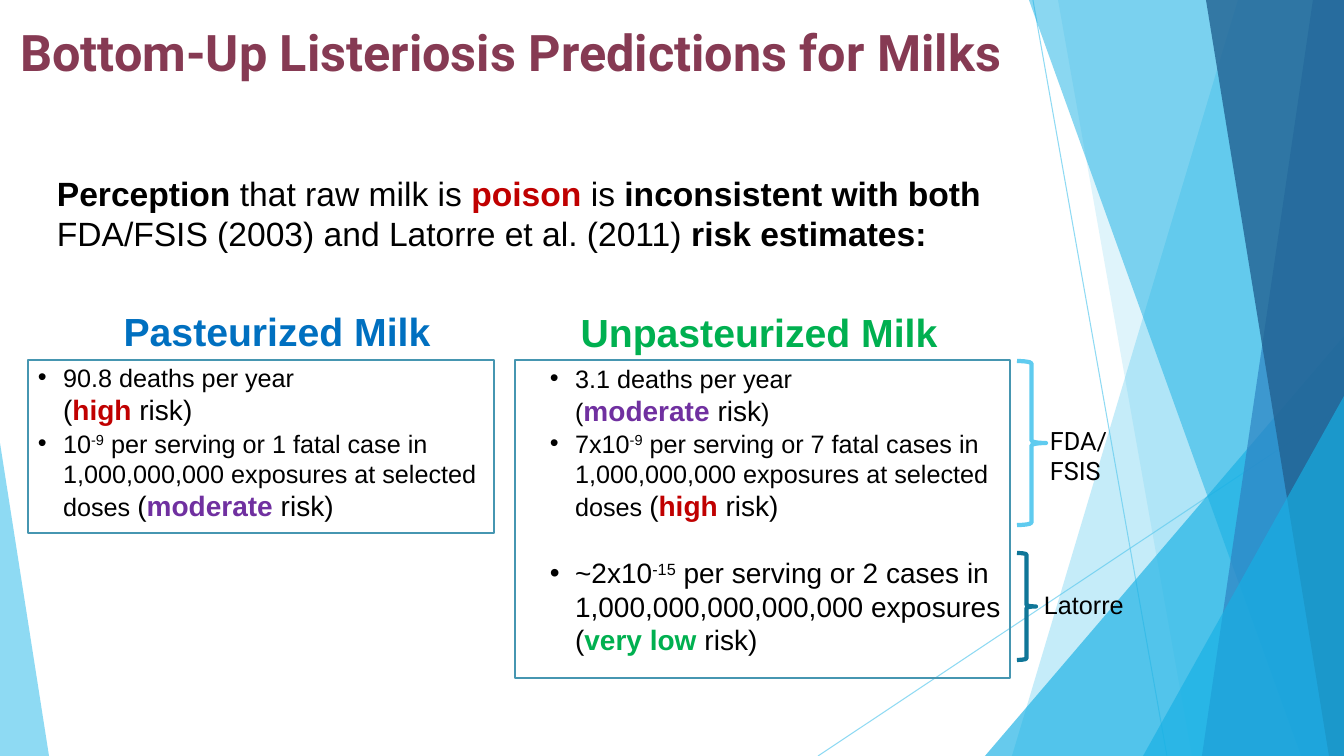
from lxml.etree import SubElement
from pptx import Presentation
from pptx.dml.color import RGBColor
from pptx.enum.shapes import MSO_CONNECTOR, MSO_SHAPE
from pptx.enum.text import PP_ALIGN
from pptx.oxml.ns import qn
from pptx.util import Pt

PX = 914400 / 100.8
W, H = 1344, 756
COLORS = dict(
    black="000000", plum="863A53", blue="0070C0", green="00B050", red="C00000",
    purple="7030A0", frame="4696B1", sky="5FCBEF", cyan="17B0E4",
    mid="2E83C3", navy="226292", teal="0F7698",
)

RAYS = [((1033, 0), (1167, H)), ((W, 406), (818, H))]
BACKDROP = [
    ("band", (1238, 1012), "sky", 36),
    ("band", (1058, 1192), "sky", 20),
    ("triangle", (985, 336, 359, 420, 1), "cyan", 66),
    ("band", (1029, 1301), "cyan", 50),
    ("band", (1313, 1202), "mid", 70),
    ("band", (1206, 1329), "navy", 80),
    ("triangle", (1143, 396, 201, 360, 1), "cyan", 66),
    ("triangle", (0, 443, 49, 313, 0), "sky", 70),
]

TITLE = [[("Bottom-Up Listeriosis Predictions for Milks", {"bold": True})]]
INTRO = [[
    ("Perception ", {"bold": True}), ("that raw milk is ", {}),
    ("poison", {"bold": True, "color": "red"}), (" is ", {}),
    ("inconsistent with both ", {"bold": True}),
    ("FDA/FSIS (2003) and Latorre et al. (2011) ", {}),
    ("risk estimates:", {"bold": True}),
]]
BIG = {"size": 20}
HIGH = {"size": 20, "bold": True, "color": "red"}
MODERATE = {"size": 20, "bold": True, "color": "purple"}
VERY_LOW = {"size": 20, "bold": True, "color": "green"}
SUP = {"sup": True}

PASTEURIZED_DEATHS = [[
    ("90.8 deaths per year \n", {}), ("(", BIG), ("high ", HIGH), ("risk)", BIG),
]]
PASTEURIZED_SERVING = [[
    ("10", {}), ("-9", SUP),
    (" per serving or 1 fatal case in 1,000,000,000 exposures at selected doses ", {}),
    ("(", BIG), ("moderate", MODERATE), (" risk)", BIG),
]]
RAW_DEATHS = [[
    ("3.1 deaths per year \n(", {}), ("moderate", MODERATE), (" risk", BIG), (")", {}),
]]
RAW_SERVING = [
    [
        ("7x10", {}), ("-9", SUP),
        (" per serving or 7 fatal cases in 1,000,000,000 exposures at selected doses ", {}),
        ("(", BIG), ("high", HIGH), (" risk)", BIG),
    ],
    [
        ("~2x10", BIG), ("-15", {"size": 20, "sup": True}),
        (" per serving or 2 cases in 1,000,000,000,000,000 exposures (", BIG),
        ("very low ", VERY_LOW), ("risk)", BIG),
    ],
]
HEADING = {"size": 28, "align": PP_ALIGN.CENTER}
TEXTS = [
    ((1, 302, 552, 57), [[("Pasteurized Milk", {"bold": True, "color": "blue"})]], HEADING),
    ((475, 303, 568, 57), [[("Unpasteurized Milk", {"bold": True, "color": "green"})]], HEADING),
    ((28, 357, 521, 75), PASTEURIZED_DEATHS, {"bullet": True}),
    ((28, 423, 497, 105), PASTEURIZED_SERVING, {"bullet": True}),
    ((540, 358, 271, 75), RAW_DEATHS, {"bullet": True}),
    ((540, 423, 524, 241), RAW_SERVING, {"bullet": True, "gap": 24}),
    ((47, 168, 1016, 100), INTRO, {"size": 24, "before": 6, "after": 6}),
    ((0, 16, 1022, 94), TITLE, {"size": 36, "font": "Roboto", "color": "plum",
                                "align": PP_ALIGN.CENTER}),
    ((1040, 420, 123, 70), [[("FDA/\nFSIS", {})]], {"font": "Roboto"}),
    ((1034, 584, 101, 40), [[("Latorre", {})]], {}),
]
OUTLINES = [
    (MSO_SHAPE.RECTANGLE, (28, 360, 466, 173), "frame", 1.5),
    (MSO_SHAPE.RECTANGLE, (515, 360, 495, 318), "frame", 1.5),
    (MSO_SHAPE.RIGHT_BRACE, (1017, 361, 29, 164), "sky", 3),
    (MSO_SHAPE.RIGHT_BRACE, (1017, 553, 19, 107), "teal", 3),
]


def emu(*lengths):
    return [round(v * PX) for v in lengths]


def rgb(name):
    return RGBColor.from_string(COLORS[name])


def set_alpha(sp, percent):
    color = next(sp._element.spPr.iter(qn("a:srgbClr")))
    SubElement(color, qn("a:alpha"), val=str(percent * 1000))


def add_ray(s, start, end):
    sp = s.shapes.add_connector(MSO_CONNECTOR.STRAIGHT, *emu(*start, *end))
    sp.line.color.rgb = rgb("sky")
    sp.line.width = Pt(0.75)
    set_alpha(sp, 70)
    SubElement(sp._element.spPr, qn("a:effectLst"))


def add_backdrop(s, kind, place, color, alpha):
    if kind == "band":
        top, bottom = place
        outline = s.shapes.build_freeform(top, 0, scale=PX)
        outline.add_line_segments([(W, 0), (W, H), (bottom, H)], close=True)
        sp = outline.convert_to_shape()
    else:
        *box, apex = place
        sp = s.shapes.add_shape(MSO_SHAPE.ISOSCELES_TRIANGLE, *emu(*box))
        sp.adjustments[0] = apex
    sp.shadow.inherit = False
    sp.fill.solid()
    sp.fill.fore_color.rgb = rgb(color)
    sp.line.fill.background()
    set_alpha(sp, alpha)


def add_outline(s, shape, box, color, width):
    sp = s.shapes.add_shape(shape, *emu(*box))
    sp.shadow.inherit = False
    sp.fill.background()
    sp.line.color.rgb = rgb(color)
    sp.line.width = Pt(width)


def add_run(p, text, font="Arial", size=18, color="black", bold=False, sup=False):
    for i, part in enumerate(text.split("\n")):
        if i:
            p.add_line_break()
        if part:
            r = p.add_run()
            r.text = part
            r.font.name, r.font.size, r.font.bold = font, Pt(size), bold
            r.font.color.rgb = rgb(color)
            if sup:
                r.font._element.set("baseline", "30000")


def add_text(s, box, paragraphs, align=PP_ALIGN.LEFT, bullet=False, before=0, after=0,
             gap=0, **base):
    tf = s.shapes.add_textbox(*emu(*box)).text_frame
    tf.word_wrap = True
    for i, runs in enumerate(paragraphs):
        p = tf.add_paragraph() if i else tf.paragraphs[0]
        p.alignment = align
        p.space_before = Pt(gap if i else before)
        p.space_after = Pt(after)
        if bullet:
            pPr = p._p.get_or_add_pPr()
            pPr.set("marL", "228600")
            pPr.set("indent", "-228600")
            SubElement(pPr, qn("a:buFont"), typeface="Arial")
            SubElement(pPr, qn("a:buChar"), char="•")
        for text, look in runs:
            add_run(p, text, **{**base, **look})


def main():
    """Build the milk listeriosis risk slide."""
    prs = Presentation()
    prs.slide_width, prs.slide_height = emu(W, H)
    s = prs.slides.add_slide(prs.slide_layouts[6])
    for start, end in RAYS:
        add_ray(s, start, end)
    for item in BACKDROP:
        add_backdrop(s, *item)
    for box, paragraphs, look in TEXTS:
        add_text(s, box, paragraphs, **look)
    for item in OUTLINES:
        add_outline(s, *item)
    prs.save("out.pptx")


if __name__ == "__main__":
    main()
